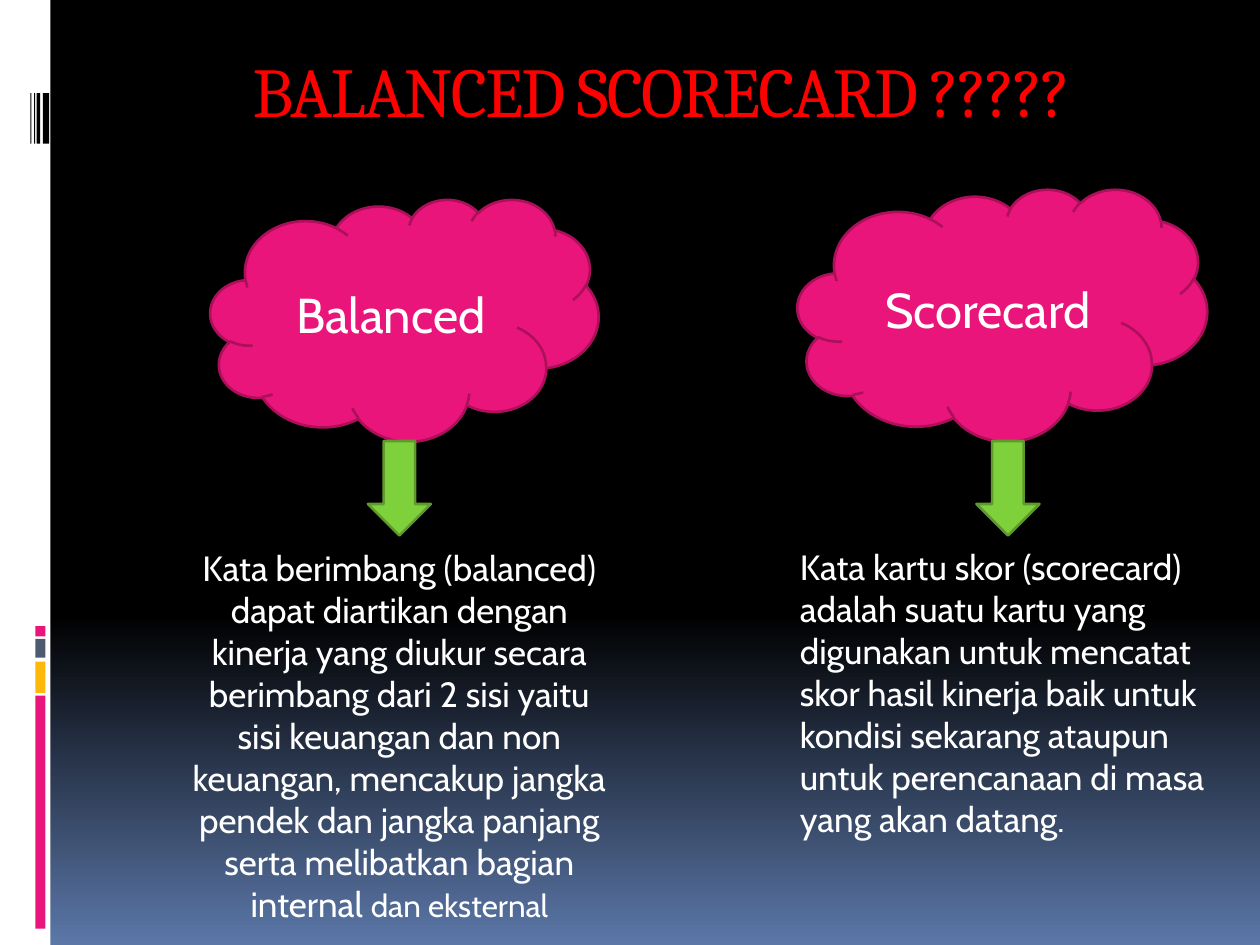
from copy import deepcopy

from pptx import Presentation
from pptx.dml.color import RGBColor
from pptx.enum import shapes, text
from pptx.oxml.ns import qn
from pptx.util import Inches, Pt

SHAPE = shapes.MSO_SHAPE
ALIGN = text.PP_ALIGN
ANCHOR = text.MSO_ANCHOR


def color(value):
    """Turn a hex string into a colour."""
    return RGBColor.from_string(value)


class Painter:
    """Hold the style and the current slide."""

    font, heading_font = "Cabin", "Cambria"
    white, black, red = "FFFFFF", "000000", "FF0000"
    pink, pink_edge = "EA157A", "AD105A"
    green, green_edge = "7FD13B", "5E9B2C"
    amber, slate, blue = "FEB80A", "4E5B6F", "5B77A8"

    def __init__(self, page):
        """Start drawing on a page."""
        self.page = page

    def background(self):
        """Fade the page from black to blue over its lower third."""
        fill = self.page.background.fill
        fill.gradient()
        fill.gradient_angle = 270
        for stop, value in zip(fill.gradient_stops, (self.black, self.blue)):
            stop.color.rgb = color(value)
        first = next(self.page.element.iter(qn("a:gs")))
        middle = deepcopy(first)
        middle.set("pos", "65000")
        first.addnext(middle)

    def format(self, para, size, value, font, align):
        """Set the alignment and the runs of a paragraph."""
        para.alignment = align
        for span in para.runs:
            span.font.size = Pt(size)
            span.font.name = font
            span.font.color.rgb = color(value)

    def title(self, words, *place):
        """Place and format the title."""
        box = self.page.shapes.title
        box.left, box.top, box.width, box.height = map(Inches, place)
        frame = box.text_frame
        frame.text = words
        frame.vertical_anchor = ANCHOR.TOP
        para = frame.paragraphs[0]
        self.format(para, 40, self.red, self.heading_font, ALIGN.CENTER)
        para.runs[0].font._element.set("spc", "-100")

    def shape(self, kind, place, fill, edge=None, words=None):
        """Draw a filled shape with an optional edge and label."""
        box = self.page.shapes.add_shape(kind, *map(Inches, place))
        box.shadow.inherit = False
        box.fill.solid()
        box.fill.fore_color.rgb = color(fill)
        if edge:
            box.line.color.rgb = color(edge)
            box.line.width = Pt(1.5)
        else:
            box.line.fill.background()
        if words:
            frame = box.text_frame
            frame.text = words
            frame.vertical_anchor = ANCHOR.MIDDLE
            self.format(frame.paragraphs[0], 28, self.white, self.font, ALIGN.CENTER)

    def passage(self, words, place, align, ending=None):
        """Write a wrapped passage, with an optional smaller ending."""
        box = self.page.shapes.add_textbox(*map(Inches, place))
        frame = box.text_frame
        frame.word_wrap = True
        frame.vertical_anchor = ANCHOR.MIDDLE
        frame.text = words
        para = frame.paragraphs[0]
        if ending:
            para.add_run().text = ending
        self.format(para, 20, self.white, self.font, align)
        if ending:
            para.runs[-1].font.size = Pt(18)

    def side_band(self):
        """Draw the white band with its coloured blocks and stripes."""
        self.shape(SHAPE.RECTANGLE, (0, 0, 0.4, 7.5), self.white)
        blocks = [(5.52, 1.85, self.pink), (5.25, 0.25, self.amber),
                  (5.07, 0.15, self.slate), (4.97, 0.08, self.pink)]
        for top, height, fill in blocks:
            self.shape(SHAPE.RECTANGLE, (0.28, top, 0.08, height), fill)
        for left, width in [(0.34, 0.05), (0.29, 0.03), (0.27, 0.01), (0.24, 0.01)]:
            self.shape(SHAPE.RECTANGLE, (left, 0.74, width, 0.4), self.black)


def main():
    """Build and save the deck."""
    deck = Presentation()
    deck.slide_width, deck.slide_height = Inches(10), Inches(7.5)
    painter = Painter(deck.slides.add_slide(deck.slide_layouts[5]))
    painter.background()
    painter.side_band()
    painter.title("BALANCED SCORECARD ?????", 1, 0.33, 8.5, 1)

    clouds = [("Balanced", (1.67, 1.58, 3.08, 1.92)),
              ("Scorecard", (6.33, 1.5, 3.25, 2))]
    for words, place in clouds:
        painter.shape(SHAPE.CLOUD, place, painter.pink, painter.pink_edge, words)
    for left in (2.92, 7.75):
        painter.shape(SHAPE.DOWN_ARROW, (left, 3.5, 0.5, 0.75),
                      painter.green, painter.green_edge)

    painter.passage(
        "Kata berimbang (balanced) dapat diartikan dengan kinerja yang diukur "
        "secara berimbang dari 2 sisi yaitu sisi keuangan dan non keuangan, "
        "mencakup jangka pendek dan jangka panjang serta melibatkan bagian "
        "internal ",
        (1.42, 4.17, 3.5, 3.33), ALIGN.CENTER, "dan eksternal")
    painter.passage(
        "Kata kartu skor (scorecard) adalah suatu kartu yang digunakan untuk "
        "mencatat skor hasil kinerja baik untuk kondisi sekarang ataupun untuk "
        "perencanaan di masa yang akan datang.",
        (6.25, 3.83, 3.5, 3.33), ALIGN.LEFT)
    deck.save("out.pptx")


if __name__ == "__main__":
    main()
